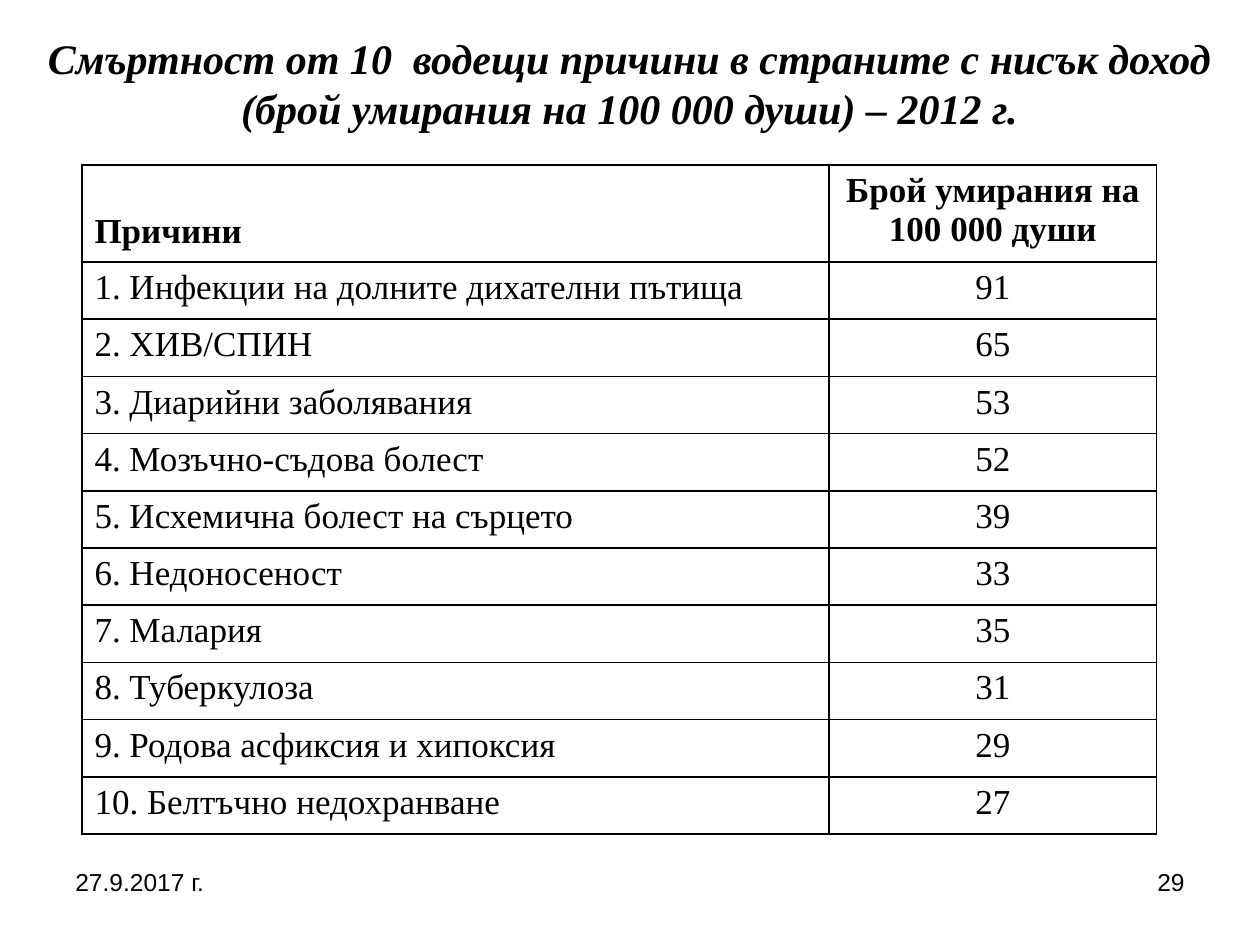
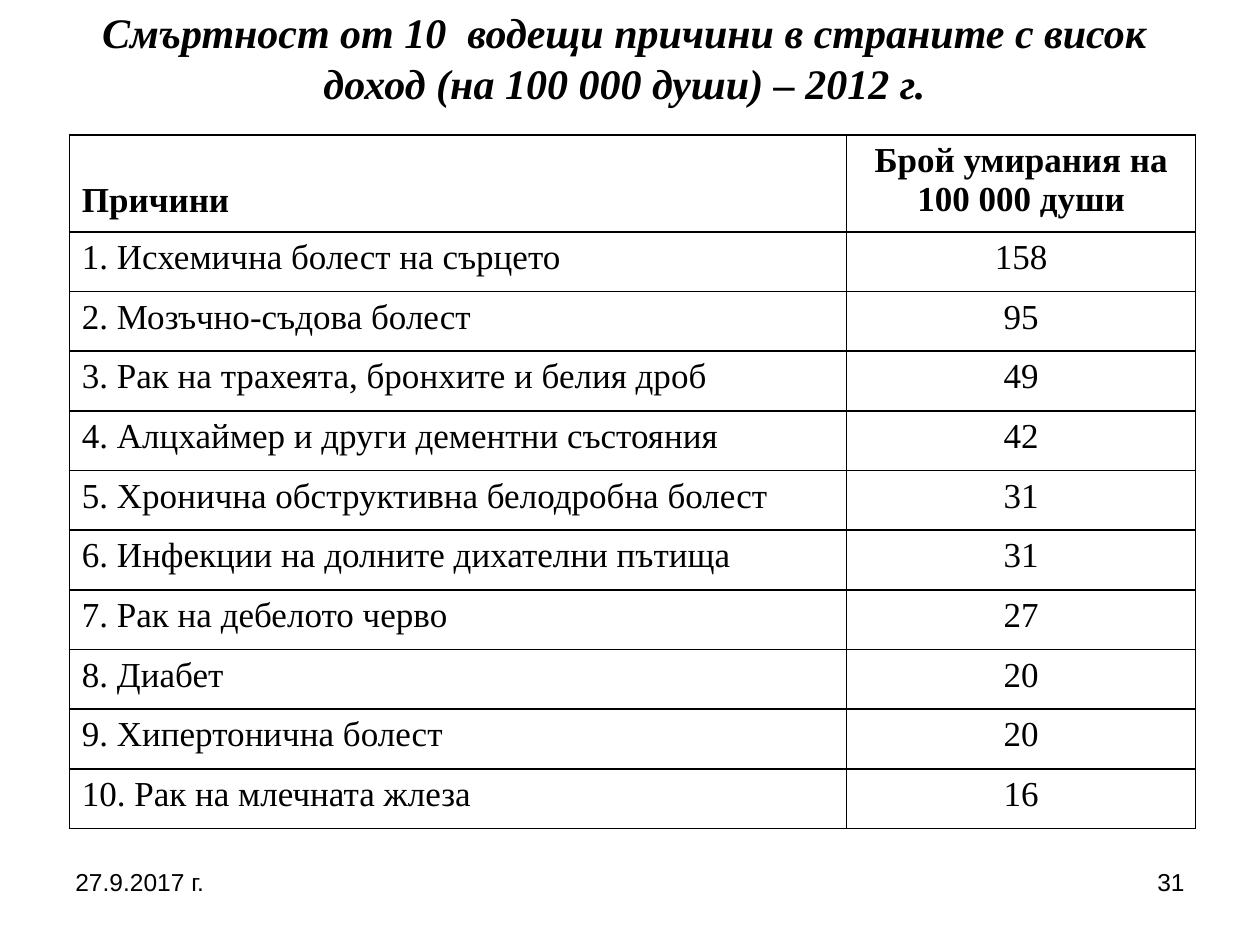
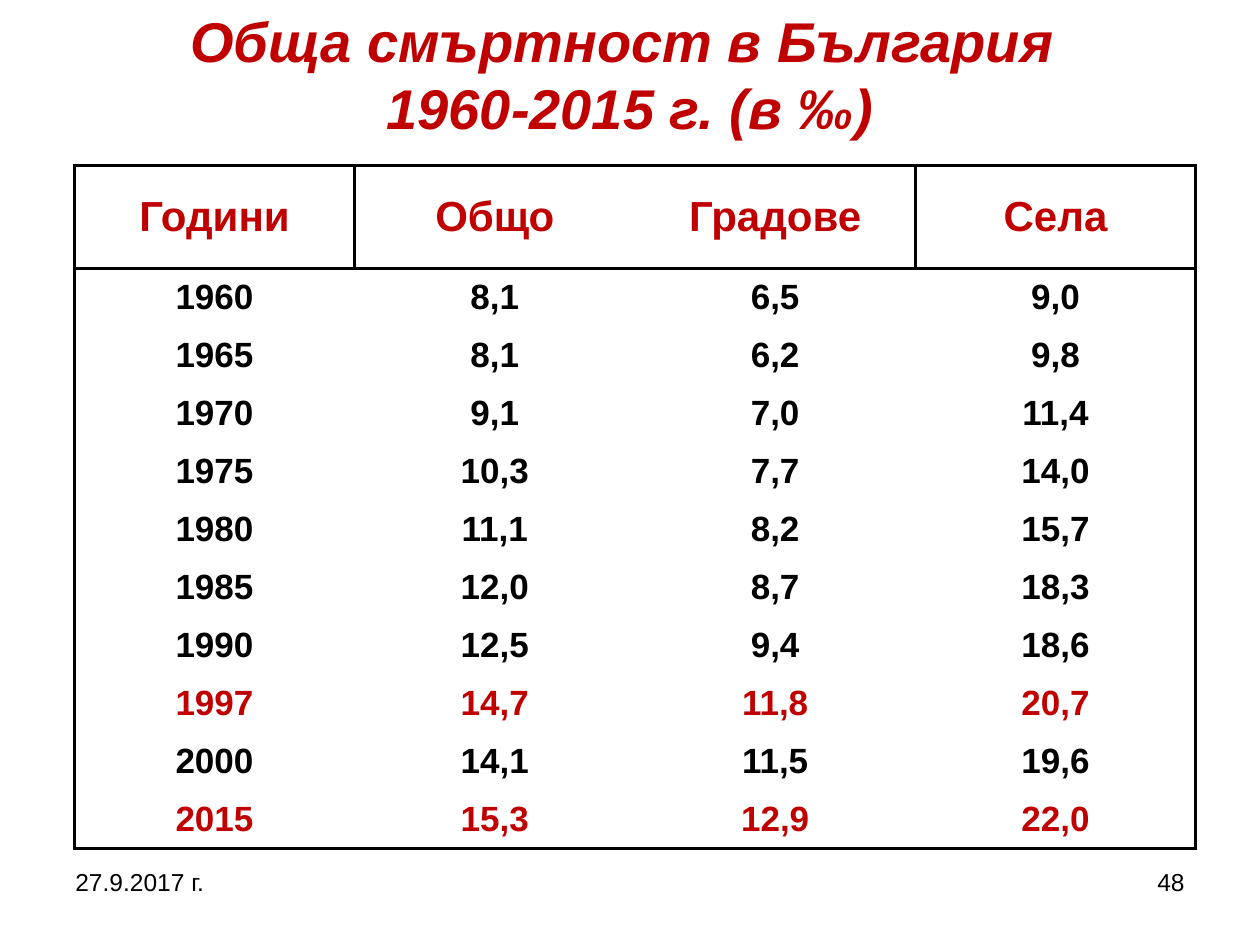
"""Builds three slides of mortality tables on a grid of 100 columns by 75 rows."""
from lxml.etree import SubElement
from pptx import Presentation
from pptx.dml.color import RGBColor
from pptx.enum.text import MSO_ANCHOR, PP_ALIGN
from pptx.oxml.ns import qn
from pptx.util import Inches, Pt

COLORS = {"ink": "000000", "accent": "C00000"}
SERIF, SANS = "Times New Roman", "Arial"
GRID = Inches(10) // 100
DATE = "27.9.2017 г."
CAUSE_HEADER = ("Причини", "Брой умирания на 100 000 души")

SLIDES = [
    {
        "number": "29", "kind": "causes", "font": SERIF, "color": "ink",
        "title": "Смъртност от 10  водещи причини в страните с нисък доход (брой умирания на 100 000 души) – 2012 г.",
        "title_at": (2.7, 2, 94.5, 9.1), "title_size": 24,
        "table_at": (6.5, 13.1), "columns": (59.3, 26), "header_row": 7.7, "body_row": 4.54,
        "rows": [
            CAUSE_HEADER,
            ("1. Инфекции на долните дихателни пътища", "91"),
            ("2. ХИВ/СПИН", "65"),
            ("3. Диарийни заболявания", "53"),
            ("4. Мозъчно-съдова болест", "52"),
            ("5. Исхемична болест на сърцето", "39"),
            ("6. Недоносеност", "33"),
            ("7. Малария", "35"),
            ("8. Туберкулоза", "31"),
            ("9. Родова асфиксия и хипоксия", "29"),
            ("10. Белтъчно недохранване", "27"),
        ],
    },
    {
        "number": "31", "kind": "causes", "font": SERIF, "color": "ink",
        "title": "Смъртност от 10  водещи причини в страните с висок доход (на 100 000 души) – 2012 г.",
        "title_at": (2.7, 0, 93.7, 9.1), "title_size": 24,
        "table_at": (5.5, 10.7), "columns": (61.7, 27.7), "header_row": 7.7, "body_row": 4.74,
        "rows": [
            CAUSE_HEADER,
            ("1. Исхемична болест на сърцето", "158"),
            ("2. Мозъчно-съдова болест", "95"),
            ("3. Рак на трахеята, бронхите и белия дроб", "49"),
            ("4. Алцхаймер и други дементни състояния", "42"),
            ("5. Хронична обструктивна белодробна болест", "31"),
            ("6. Инфекции на долните дихателни пътища", "31"),
            ("7. Рак на дебелото черво", "27"),
            ("8. Диабет", "20"),
            ("9. Хипертонична болест", "20"),
            ("10. Рак на млечната жлеза", "16"),
        ],
    },
    {
        "number": "48", "kind": "years", "font": SANS, "color": "accent",
        "title": "Обща смъртност в България \n1960-2015 г. (в ‰)",
        "title_at": (0, 0, 100, 11.7), "title_size": 32,
        "table_at": (5.9, 13.1), "columns": (22.25,) * 4, "header_row": 8.2, "body_row": 4.61,
        "rows": [
            ("Години", "Общо", "Градове", "Села"),
            ("1960", "8,1", "6,5", "9,0"),
            ("1965", "8,1", "6,2", "9,8"),
            ("1970", "9,1", "7,0", "11,4"),
            ("1975", "10,3", "7,7", "14,0"),
            ("1980", "11,1", "8,2", "15,7"),
            ("1985", "12,0", "8,7", "18,3"),
            ("1990", "12,5", "9,4", "18,6"),
            ("1997", "14,7", "11,8", "20,7"),
            ("2000", "14,1", "11,5", "19,6"),
            ("2015", "15,3", "12,9", "22,0"),
        ],
    },
]


def write(frame, text, size, font, color="ink", align=PP_ALIGN.LEFT, bold=False, italic=False):
    frame.word_wrap = True
    frame.text = text
    for para in frame.paragraphs:
        para.alignment = align
        for span in para.runs:
            span.font.size, span.font.name = Pt(size), font
            span.font.bold, span.font.italic = bold, italic
            span.font.color.rgb = RGBColor.from_string(COLORS[color])


def draw_edges(cell, drawn, width):
    properties = cell._tc.get_or_add_tcPr()
    for side in "LRTB":
        line = SubElement(properties, qn(f"a:ln{side}"), w=str(Pt(width)))
        if side in drawn:
            fill = SubElement(line, qn("a:solidFill"))
            SubElement(fill, qn("a:srgbClr"), val=COLORS["ink"])
        else:
            SubElement(line, qn("a:noFill"))


deck = Presentation()
deck.slide_width, deck.slide_height = GRID * 100, GRID * 75

for content in SLIDES:
    page = deck.slides.add_slide(deck.slide_layouts[6])
    font, rows, columns = content["font"], content["rows"], content["columns"]
    is_years = content["kind"] == "years"

    title = page.shapes.add_textbox(*[int(GRID * n) for n in content["title_at"]])
    title.text_frame.vertical_anchor = MSO_ANCHOR.MIDDLE
    write(title.text_frame, content["title"], content["title_size"], font, content["color"],
          PP_ALIGN.CENTER, bold=True, italic=True)

    for left, text, align in ((5, DATE, PP_ALIGN.LEFT), (71.7, content["number"], PP_ALIGN.RIGHT)):
        footer = page.shapes.add_textbox(*[int(GRID * n) for n in (left, 68.3, 23.3, 5.2)])
        write(footer.text_frame, text, 14, SANS, align=align)

    heights = [content["header_row"]] + [content["body_row"]] * (len(rows) - 1)
    extent = (*content["table_at"], sum(columns), sum(heights))
    table = page.shapes.add_table(len(rows), len(columns), *[int(GRID * n) for n in extent]).table
    table.first_row = table.horz_banding = False
    for column, width in zip(table.columns, columns):
        column.width = int(GRID * width)

    last_row, last_column = len(rows) - 1, len(columns) - 1
    for r, values in enumerate(rows):
        table.rows[r].height = int(GRID * heights[r])
        for c, value in enumerate(values):
            cell = table.cell(r, c)
            if is_years:
                accented = r == 0 or values[0] in ("1997", "2015")
                write(cell.text_frame, value, 24 if r == 0 else 20, font,
                      "accent" if accented else "ink", PP_ALIGN.CENTER, bold=True)
                cell.vertical_anchor = MSO_ANCHOR.MIDDLE
                drawn = "L" if c == 0 or (r == 0 and c in (1, 3)) else ""
                drawn += "R" if c == last_column or (r == 0 and c in (0, 2)) else ""
                drawn += "T" if r in (0, 1) else ""
                drawn += "B" if r in (0, last_row) else ""
                draw_edges(cell, drawn, 2)
            else:
                write(cell.text_frame, value, 20, font, bold=r == 0,
                      align=PP_ALIGN.CENTER if c else PP_ALIGN.LEFT)
                if r == c == 0:
                    cell.vertical_anchor = MSO_ANCHOR.BOTTOM
                    cell.margin_bottom = int(GRID * 0.9)
                draw_edges(cell, "LRTB", 1)
            cell.fill.background()

deck.save("out.pptx")
